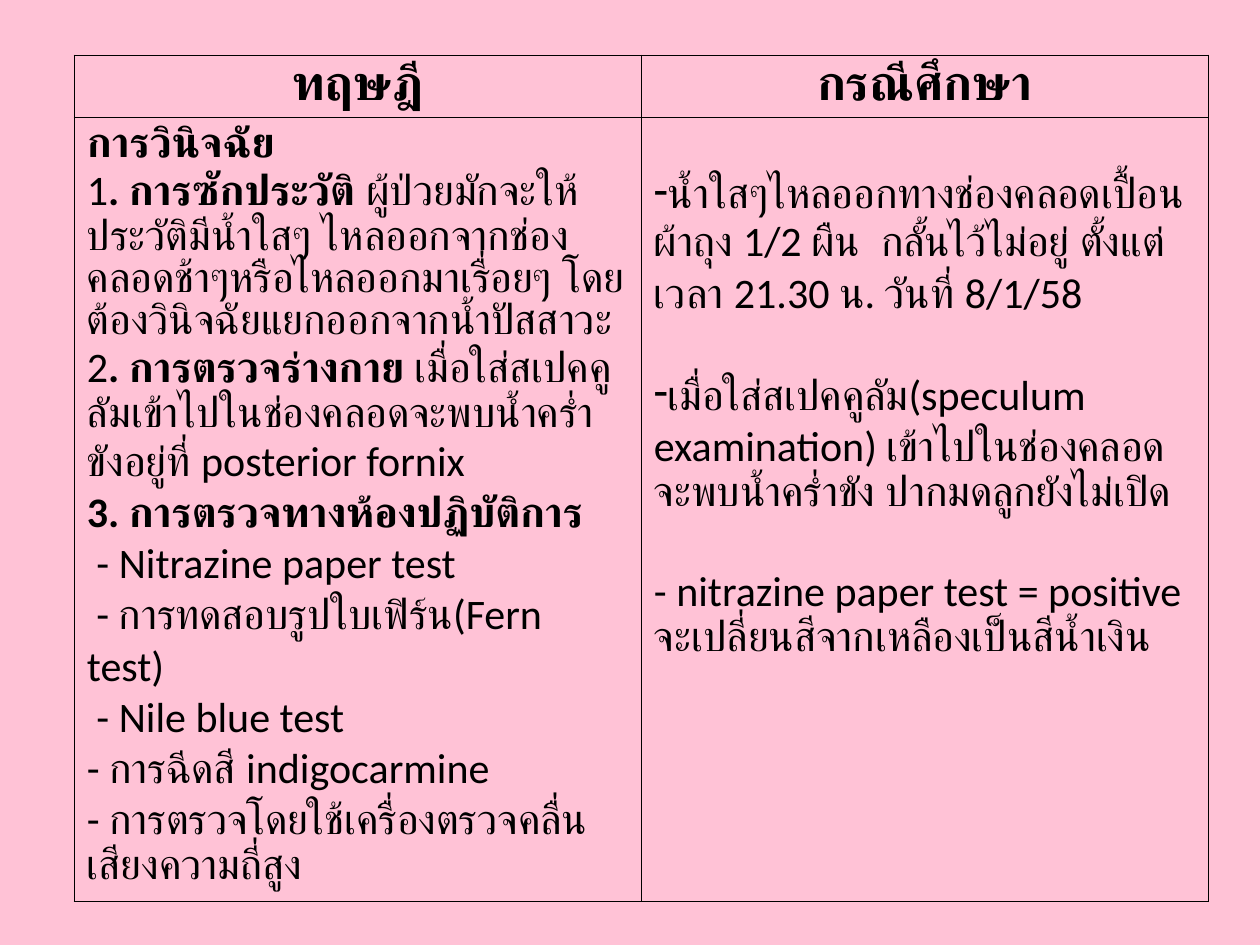
from lxml.etree import SubElement
from pptx import Presentation
from pptx.dml.color import RGBColor
from pptx.enum.text import PP_ALIGN
from pptx.oxml.ns import qn
from pptx.util import Pt

COLORS = {"background": "FFC2D6", "ink": "000000"}
BLANK_LINE = 29.3

HEADINGS = ["ทฤษฎี", "กรณีศึกษา"]
# Each paragraph is a list of (text, bold) runs.
THEORY = [
    [("การวินิจฉัย", True)],
    [("1", False), (". การซักประวัติ ", True),
     ("ผู้ป่วยมักจะให้ประวัติมีน้ำใสๆ ไหลออกจากช่องคลอดช้าๆหรือไหลออกมาเรื่อยๆ "
      "โดยต้องวินิจฉัยแยกออกจากน้ำปัสสาวะ", False)],
    [("2", False), (". การตรวจร่างกาย", True),
     (" เมื่อใส่สเปคคูลัมเข้าไปในช่องคลอดจะพบน้ำคร่ำขังอยู่ที่ posterior fornix", False)],
    [("3. การตรวจทางห้องปฏิบัติการ", True)],
    [(" - Nitrazine paper test", False)],
    [(" - การทดสอบรูปใบเฟิร์น(Fern test)", False)],
    [(" - Nile blue test", False)],
    [("- การฉีดสี indigocarmine", False)],
    [("- การตรวจโดยใช้เครื่องตรวจคลื่นเสียงความถี่สูง", False)],
]
# Each finding is its text and whether it has a dash bullet.
FINDINGS = [
    ("น้ำใสๆไหลออกทางช่องคลอดเปื้อนผ้าถุง 1/2 ผืน  กลั้นไว้ไม่อยู่ "
     "ตั้งแต่เวลา 21.30 น. วันที่ 8/1/58", True),
    ("เมื่อใส่สเปคคูลัม(speculum examination) เข้าไปในช่องคลอดจะพบน้ำคร่ำขัง "
     "ปากมดลูกยังไม่เปิด", True),
    ("- nitrazine paper test = positive จะเปลี่ยนสีจากเหลืองเป็นสีน้ำเงิน", False),
]


class SlideBuilder:
    def __init__(self, slide):
        self.slide = slide
        self.font = "Calibri"
        self.ink = RGBColor.from_string(COLORS["ink"])

    def background(self, color):
        fill = self.slide.background.fill
        fill.solid()
        fill.fore_color.rgb = RGBColor.from_string(color)

    def table(self, left, top, widths, heights):
        frame = self.slide.shapes.add_table(
            len(heights), len(widths), Pt(left), Pt(top),
            Pt(sum(widths)), Pt(sum(heights)))
        table = frame.table
        table.first_row = table.horz_banding = False
        for column, width in zip(table.columns, widths):
            column.width = Pt(width)
        for row, height in zip(table.rows, heights):
            row.height = Pt(height)
        for cell in table.iter_cells():
            self.borders(cell)
            cell.fill.background()
        return table

    def borders(self, cell):
        tc_pr = cell._tc.get_or_add_tcPr()
        for side in ("lnL", "lnR", "lnT", "lnB"):
            line = SubElement(tc_pr, qn(f"a:{side}"), w=str(Pt(1)))
            fill = SubElement(line, qn("a:solidFill"))
            SubElement(fill, qn("a:srgbClr"), val=COLORS["ink"])

    def paragraph(self, cell, runs, size=24, bullet=None, **formats):
        """Fill the cell's empty first paragraph, or add one after its text."""
        tf = cell.text_frame
        p = tf.add_paragraph() if tf.text else tf.paragraphs[0]
        for name, value in formats.items():
            setattr(p, name, value)
        if bullet:
            p_pr = p._p.get_or_add_pPr()
            p_pr.set("marL", "0")
            p_pr.set("indent", "0")
            SubElement(p_pr, qn("a:buChar"), char=bullet)
        for text, bold in runs:
            r = p.add_run()
            r.text = text
            style = {"name": self.font, "size": Pt(size), "bold": bold}
            for name, value in style.items():
                setattr(r.font, name, value)
            r.font.color.rgb = self.ink


def main():
    prs = Presentation()
    prs.slide_width, prs.slide_height = Pt(720), Pt(540)
    s = SlideBuilder(prs.slides.add_slide(prs.slide_layouts[6]))
    s.background(COLORS["background"])
    table = s.table(42.5, 31.7, [324, 324], [35.4, 448])

    for column, heading in enumerate(HEADINGS):
        s.paragraph(table.cell(0, column), [(heading, True)], size=28,
                    alignment=PP_ALIGN.CENTER)

    for runs in THEORY:
        s.paragraph(table.cell(1, 0), runs)

    case = table.cell(1, 1)
    case.margin_top = Pt(3.6 + BLANK_LINE)
    for i, (text, dashed) in enumerate(FINDINGS):
        s.paragraph(case, [(text, False)], bullet="-" if dashed else None,
                    space_before=Pt(BLANK_LINE if i else 0))

    prs.save("out.pptx")


if __name__ == "__main__":
    main()
